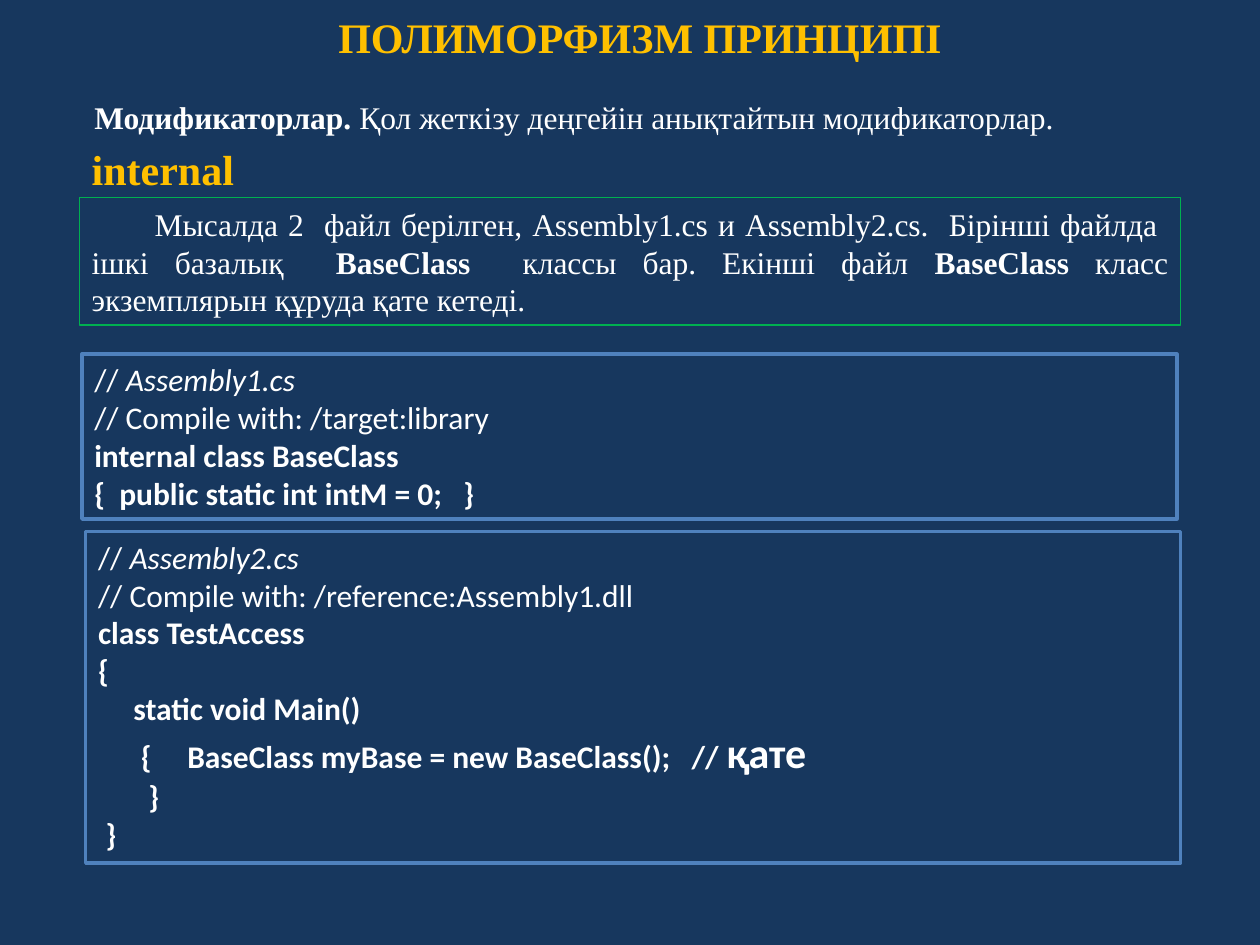
from pptx import Presentation, util as u
from pptx.dml.color import RGBColor
from pptx.enum import shapes, text

SERIF, SANS = "Times New Roman", "Calibri"
GOLD, WHITE, BLUE, GREEN, NAVY = "FFC000", "FFFFFF", "4F81BD", "00B050", "17375E"

deck = Presentation()
deck.slide_width, deck.slide_height = u.Inches(10), u.Inches(7.5)
slide = deck.slides.add_slide(deck.slide_layouts[5])


def paint(part, tone):
    """Set a fill, line fill or font to a solid hex colour."""
    fill = part.fill if hasattr(part, "fill") else part
    fill.solid()
    fill.fore_color.rgb = RGBColor.from_string(tone)


def write(frame, rows, face, size, tone):
    """Fill a frame; each row is (indent in inches, [(words, style), ...])."""
    for i, (gap, runs) in enumerate(rows):
        par = frame.paragraphs[0] if i == 0 else frame.add_paragraph()
        par.font.name, par.font.size = face, u.Pt(size)
        paint(par.font, tone)
        if gap:
            par._p.get_or_add_pPr().set("indent", str(u.Inches(gap)))
        for words, style in runs:
            run = par.add_run()
            run.text = words
            run.font.bold = "b" in style
            run.font.italic = "i" in style
            if "L" in style:
                run.font.size = u.Pt(24)


paint(slide.background, NAVY)

# Title
head = slide.shapes.title
head.left, head.top = u.Inches(-0.03), u.Inches(0.03)
head.width, head.height = u.Inches(10.22), u.Inches(0.52)
frame = head.text_frame
frame.vertical_anchor = text.MSO_ANCHOR.MIDDLE
write(frame, [(0, [("ПОЛИМОРФИЗМ ПРИНЦИПІ", "b")])], SERIF, 24, GOLD)
frame.paragraphs[0].alignment = text.PP_ALIGN.CENTER

# Plain lines: place, wrap, size, colour, rows
lines = [
    ((0.65, 0.73, 8.69, 0.4), True, 18, WHITE,
     [(0, [("Модификаторлар. ", "b"),
           ("Қол жеткізу деңгейін анықтайтын модификаторлар.", "")])]),
    ((0.63, 1.09, 1.34, 0.5), False, 24, GOLD, [(0, [("internal", "b")])]),
]
for place, wrap, size, tone, rows in lines:
    frame = slide.shapes.add_textbox(*map(u.Inches, place)).text_frame
    frame.word_wrap = wrap
    frame.auto_size = text.MSO_AUTO_SIZE.SHAPE_TO_FIT_TEXT
    write(frame, rows, SERIF, size, tone)

# Framed boxes: place, edge colour, edge width, font, anchor, alignment, rows
task = [(0.5, [
    ("Мысалда 2  файл берілген, Assembly1.cs и Assembly2.cs.  "
     "Бірінші файлда  ішкі базалық  ", ""),
    ("BaseClass ", "b"), (" классы бар. Екінші файл ", ""),
    ("BaseClass", "b"), (" класс экземплярын құруда қате кетеді.   ", "")])]
first = [
    (0, [("// ", ""), ("Assembly1.cs", "i")]),
    (0, [("// Compile with: /target:library", "")]),
    (0, [("internal class BaseClass", "b")]),
    (0, [("{  public static int intM = 0;   }", "b")]),
]
second = [
    (0, [("// ", ""), ("Assembly2.cs", "i")]),
    (0, [("// Compile with: /reference:Assembly1.dll", "")]),
    (0, [("class TestAccess", "b")]),
    (0, [("{", "b")]),
    (0.28, [("static void Main()", "b")]),
    (0.34, [("{     BaseClass myBase = new BaseClass();   // ", "b"),
            ("қате", "bL")]),
    (0.4, [("}", "b")]),
    (0.06, [("}", "b")]),
]
top, mid = text.MSO_ANCHOR.TOP, text.MSO_ANCHOR.MIDDLE
left, just = text.PP_ALIGN.LEFT, text.PP_ALIGN.JUSTIFY
boxes = [
    ((0.63, 1.57, 8.74, 1.01), GREEN, 0.75, SERIF, mid, just, task),
    ((0.65, 2.81, 8.69, 1.31), BLUE, 2, SANS, top, left, first),
    ((0.68, 4.22, 8.69, 2.63), BLUE, 2, SANS, top, left, second),
]
for place, edge, width, face, anchor, align, rows in boxes:
    box = slide.shapes.add_shape(shapes.MSO_SHAPE.RECTANGLE, *map(u.Inches, place))
    box.shadow.inherit = False
    box.fill.background()
    paint(box.line, edge)
    box.line.width = u.Pt(width)
    frame = box.text_frame
    frame.word_wrap = True
    frame.auto_size = text.MSO_AUTO_SIZE.SHAPE_TO_FIT_TEXT
    frame.vertical_anchor = anchor
    write(frame, rows, face, 18, WHITE)
    for par in frame.paragraphs:
        par.alignment = align

deck.save("out.pptx")
